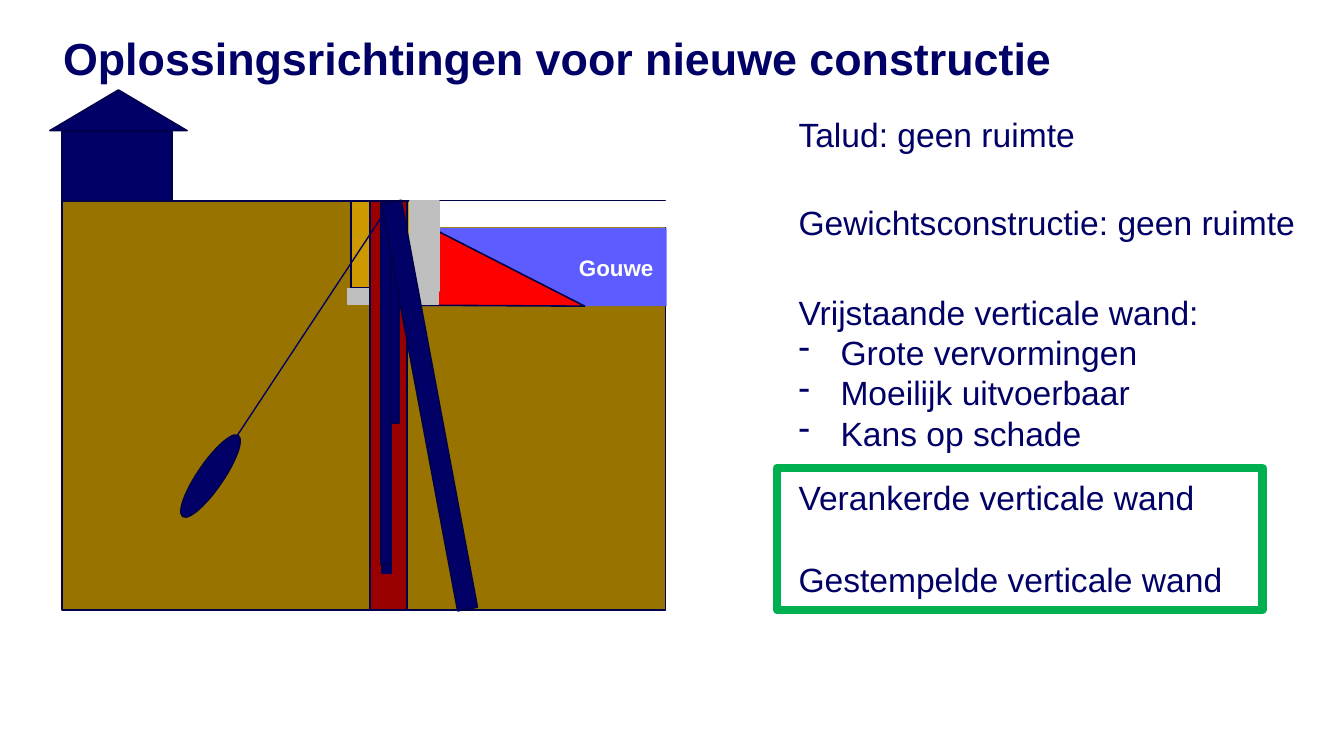
from lxml import etree
from pptx import Presentation
from pptx.dml.color import RGBColor
from pptx.enum.shapes import MSO_CONNECTOR, MSO_SHAPE
from pptx.enum.text import MSO_ANCHOR, PP_ALIGN
from pptx.oxml.ns import qn
from pptx.util import Pt

RECTANGLE = MSO_SHAPE.RECTANGLE
TRIANGLE = MSO_SHAPE.ISOSCELES_TRIANGLE
OVAL = MSO_SHAPE.OVAL
STRAIGHT = MSO_CONNECTOR.STRAIGHT
MIDDLE = MSO_ANCHOR.MIDDLE
RIGHT = PP_ALIGN.RIGHT

FONT = "Arial"
COLORS = {
    "navy": "000066", "outline": "00004B", "soil": "997300", "water": "5C5CFF",
    "white": "FFFFFF", "slope": "FF0000", "fill_sand": "CC9900",
    "concrete": "BFBFBF", "wall": "990000", "choice": "00B050",
}


def color(name):
    return RGBColor.from_string(COLORS[name])


def paint(shape, fill=None, line=None, line_width=0.85):
    shape.shadow.inherit = False
    if fill:
        shape.fill.solid()
        shape.fill.fore_color.rgb = color(fill)
    else:
        shape.fill.background()
    if line:
        shape.line.color.rgb = color(line)
        shape.line.width = Pt(line_width)
    else:
        shape.line.fill.background()


def add_part(slide, kind, box, fill, line="outline", rotation=0):
    shape = slide.shapes.add_shape(kind, *[Pt(length) for length in box])
    shape.rotation = rotation
    paint(shape, fill, line)
    return shape


def format_paragraph(paragraph, size, font_color="navy", bold=False):
    for run in paragraph.runs:
        run.font.name = FONT
        run.font.size = Pt(size)
        run.font.bold = bold
        run.font.color.rgb = color(font_color)


def add_dash(paragraph, indent=22.5):
    properties = paragraph._p.get_or_add_pPr()
    properties.set("marL", str(Pt(indent)))
    properties.set("indent", str(-Pt(indent)))
    etree.SubElement(properties, qn("a:buChar")).set("char", "-")


def add_text(slide, box, heading, dashes=(), size=18, bold=False):
    text_box = slide.shapes.add_textbox(*[Pt(length) for length in box])
    frame = text_box.text_frame
    frame.word_wrap = True
    frame.margin_left = frame.margin_right = frame.margin_top = frame.margin_bottom = 0
    frame.text = heading
    for dash in dashes:
        paragraph = frame.add_paragraph()
        paragraph.text = dash
        add_dash(paragraph)
    for paragraph in frame.paragraphs:
        format_paragraph(paragraph, size, bold=bold)


def add_cross_section(slide, left, top, width, height):
    """Draw the quay; the box is the soil block, with the house standing on it."""
    def part(kind, x, y, part_width, part_height, fill, line="outline", rotation=0):
        box = (left + x, top + y, part_width, part_height)
        return add_part(slide, kind, box, fill, line, rotation)

    part(RECTANGLE, 0, 0, width, height, "soil")
    water = part(RECTANGLE, 170.6, 14.4, 153.4, 41.8, "water", None)
    part(RECTANGLE, 172, 0, 152, 13.9, "white", None)
    part(RECTANGLE, 0, -37.4, 59, 37.4, "navy")
    part(TRIANGLE, -6.5, -59.6, 73.5, 21.8, "navy")

    frame = water.text_frame
    frame.vertical_anchor = MIDDLE
    frame.text = "Gouwe"
    frame.paragraphs[0].alignment = RIGHT
    format_paragraph(frame.paragraphs[0], 12, "white", bold=True)

    builder = slide.shapes.build_freeform(Pt(left + 170), Pt(top + 55.6))
    corners = [(170, 0), (280, 56.2)]
    builder.add_line_segments([(Pt(left + x), Pt(top + y)) for x, y in corners], close=True)
    paint(builder.convert_to_shape(), "slope", "outline")

    # Existing L-shaped quay with its backfill
    part(RECTANGLE, 154.8, 0, 33, 46.4, "fill_sand")
    part(RECTANGLE, 153.4, 46.8, 48.2, 8.6, "concrete", "concrete")
    part(RECTANGLE, 186.5, 0, 15.6, 48.2, "concrete", "concrete")

    # Free-standing wall
    part(RECTANGLE, 165, 0, 20, height, "wall")
    part(RECTANGLE, 172, 0, 8.6, 118.8, "navy")

    # Anchored wall
    part(RECTANGLE, 171.4, 0, 5.2, 199.4, "navy")
    ends = [left + 173.5, top + 5, left + 67, top + 166.3]
    tie = slide.shapes.add_connector(STRAIGHT, *[Pt(end) for end in ends])
    tie.line.color.rgb = color("navy")
    tie.line.width = Pt(0.75)
    etree.SubElement(tie._element.spPr, qn("a:effectLst"))
    part(OVAL, 53.3, 140.4, 52.6, 13.7, "navy", rotation=304.4)

    # Strutted wall
    part(RECTANGLE, 170.6, 0, 5.8, 194.4, "navy")
    part(RECTANGLE, 191.5, -1.4, 10.8, 221.8, "navy", rotation=349.4)


def add_options(slide, left, top, width, height):
    """List the options and frame the last two, which remain."""
    dashes = ["Grote vervormingen", "Moeilijk uitvoerbaar", "Kans op schade"]
    options = [
        (0, "Talud: geen ruimte", ()),
        (46.8, "Gewichtsconstructie: geen ruimte", ()),
        (95, "Vrijstaande verticale wand:", dashes),
        (194.4, "Verankerde verticale wand", ()),
        (238.3, "Gestempelde verticale wand", ()),
    ]
    for y, heading, details in options:
        box = (left, top + y, width, 21.8 * (1 + len(details)))
        add_text(slide, box, heading, details)
    frame_top = 189.4
    box = (left - 11.5, top + frame_top, 260, height - frame_top)
    frame = add_part(slide, RECTANGLE, box, None)
    paint(frame, None, "choice", 4.5)
    etree.SubElement(frame.line._get_or_add_ln(), qn("a:round"))


def main():
    presentation = Presentation()
    presentation.slide_width = Pt(720)
    presentation.slide_height = Pt(405)
    slide = presentation.slides.add_slide(presentation.slide_layouts[6])
    add_text(slide, (33.8, 16.6, 652, 28.8),
             "Oplossingsrichtingen voor nieuwe constructie", size=24, bold=True)
    add_cross_section(slide, 33.2, 107.8, 323.4, 219)
    add_options(slide, 427.8, 61.2, 280, 265.6)
    presentation.save("out.pptx")


if __name__ == "__main__":
    main()
